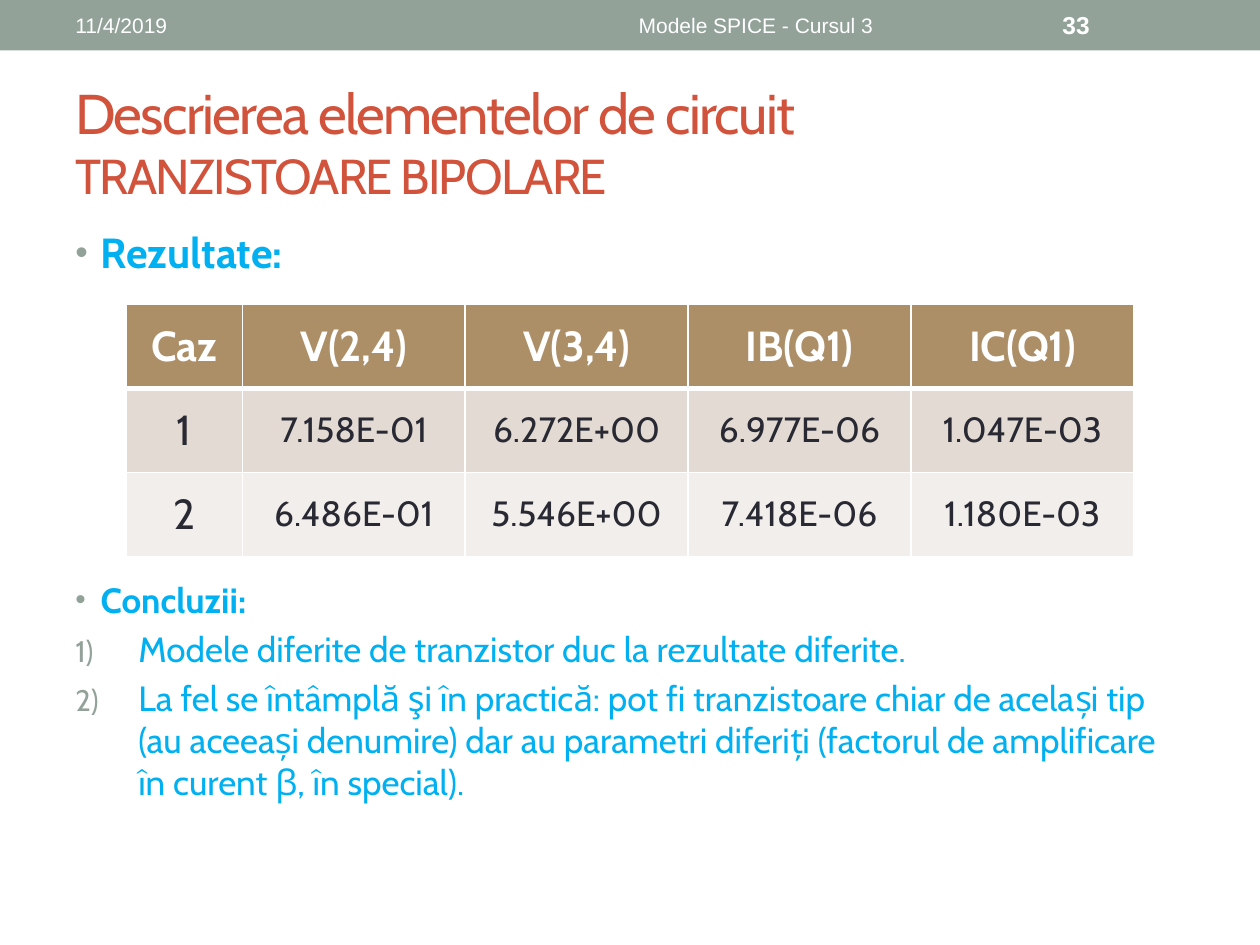
from lxml.etree import SubElement
from pptx import Presentation
from pptx.dml.color import RGBColor
from pptx.enum.shapes import MSO_SHAPE
from pptx.enum.text import MSO_ANCHOR, PP_ALIGN
from pptx.oxml import parse_xml
from pptx.oxml.ns import qn
from pptx.util import Pt

HUES = {"sage": "93A299", "red": "D2533C", "blue": "00B0F0", "white": "FFFFFF",
        "ink": "292934", "tan": "AD8F67", "sand": "E3DBD3", "pale": "F1EEEB"}
NS = "http://schemas.openxmlformats.org/drawingml/2006/main"


def paint(fill, hue):
    fill.solid()
    fill.fore_color.rgb = RGBColor.from_string(HUES[hue])


def write(para, text, hue, size, **style):
    run = para.add_run()
    run.text = text
    for key, val in {"name": "Cabin", "size": Pt(size), "bold": False, **style}.items():
        setattr(run.font, key, val)
    run.font.color.rgb = RGBColor.from_string(HUES[hue])
    return run


def frame(slide, box, anchor=MSO_ANCHOR.TOP):
    area = slide.shapes.add_textbox(*map(Pt, box)).text_frame
    area.word_wrap = True
    area.vertical_anchor = anchor
    return area


def banner(slide, box):
    left, top, width, height = box
    bar = slide.shapes.add_shape(MSO_SHAPE.RECTANGLE, *map(Pt, box))
    bar.shadow.inherit = False
    paint(bar.fill, "sage")
    bar.line.fill.background()
    parts = [
        (36, 228, "11/4/2019", PP_ALIGN.LEFT, 12, False),
        (270, 324, "Modele SPICE - Cursul 3", PP_ALIGN.CENTER, 12, False),
        (600, 84, "33", PP_ALIGN.LEFT, 14, True),
    ]
    for shift, span, text, align, size, bold in parts:
        spot = (left + shift, top + 1.44, span, height - 2.88)
        para = frame(slide, spot, MSO_ANCHOR.MIDDLE).paragraphs[0]
        para.alignment = align
        write(para, text, "white", size, name="Arial", bold=bold)


def title(slide, box):
    para = frame(slide, box, MSO_ANCHOR.MIDDLE).paragraphs[0]
    lines = [("Descrierea elementelor de circuit", 32), ("TRANZISTOARE BIPOLARE", 28)]
    for row, (text, size) in enumerate(lines):
        if row:
            para.add_line_break()
        run = write(para, text, "red", size)
        run.font._element.set("spc", "-100")


def bullet(para, indent, tag, **mark):
    props = para._p.get_or_add_pPr()
    props.set("marL", str(Pt(indent)))
    props.set("indent", str(-Pt(indent)))
    color = SubElement(props, qn("a:buClr"))
    SubElement(color, qn("a:srgbClr"), val=HUES["sage"])
    SubElement(props, qn("a:buSzPct"), val="85000")
    if tag == "a:buChar":
        SubElement(props, qn("a:buFont"), typeface="Arial")
    SubElement(props, qn(tag), **mark)


def points(slide, box, head, size, items=()):
    area = frame(slide, box)
    para = area.paragraphs[0]
    bullet(para, 14.4, "a:buChar", char="•")
    write(para, head, "blue", size, bold=True)
    for item in items:
        para = area.add_paragraph()
        para.space_before = Pt(size * 0.2)
        bullet(para, 36, "a:buAutoNum", type="arabicParenR")
        write(para, item, "blue", size)


def border(cell, **widths):
    props = cell._tc.get_or_add_tcPr()
    for spot, side in enumerate("LRTB"):
        width = Pt(widths.get(side, 1))
        props.insert(spot, parse_xml(
            f'<a:ln{side} xmlns:a="{NS}" w="{width}"><a:solidFill>'
            f'<a:srgbClr val="{HUES["white"]}"/></a:solidFill></a:ln{side}>'))


def grid(slide, box):
    data = [
        ("Caz", "V(2,4)", "V(3,4)", "IB(Q1)", "IC(Q1)"),
        ("1", "7.158E-01", "6.272E+00", "6.977E-06", "1.047E-03"),
        ("2", "6.486E-01", "5.546E+00", "7.418E-06", "1.180E-03"),
    ]
    first = 66.5
    rest = (box[2] - first) / (len(data[0]) - 1)
    table = slide.shapes.add_table(len(data), len(data[0]), *map(Pt, box)).table
    for col, column in enumerate(table.columns):
        column.width = Pt(rest if col else first)
    edges = [{"B": 3}, {"T": 3}, {}]
    for row, (texts, hue, edge) in enumerate(zip(data, ("tan", "sand", "pale"), edges)):
        table.rows[row].height = Pt(box[3] / len(data))
        for col, text in enumerate(texts):
            cell = table.cell(row, col)
            cell.vertical_anchor = MSO_ANCHOR.MIDDLE
            paint(cell.fill, hue)
            border(cell, **edge)
            para = cell.text_frame.paragraphs[0]
            para.alignment = PP_ALIGN.CENTER
            write(para, text, "ink" if row else "white",
                  20 if row and col else 24, bold=not row)


def main():
    deck = Presentation()
    deck.slide_width, deck.slide_height = Pt(720), Pt(540)
    slide = deck.slides.add_slide(deck.slide_layouts[6])
    paint(slide.background.fill, "white")
    banner(slide, (0, 0, 720, 28.8))
    title(slide, (36, 42, 648, 78))
    points(slide, (36, 126, 648, 40), "Rezultate:", 24)
    grid(slide, (72, 174, 576, 144))
    points(slide, (36, 327, 648, 183), "Concluzii:", 20, [
        "Modele diferite de tranzistor duc la rezultate diferite.",
        "La fel se întâmplă şi în practică: pot fi tranzistoare chiar de același tip "
        "(au aceeași denumire) dar au parametri diferiți (factorul de amplificare "
        "în curent β, în special).",
    ])
    deck.save("out.pptx")


if __name__ == "__main__":
    main()
